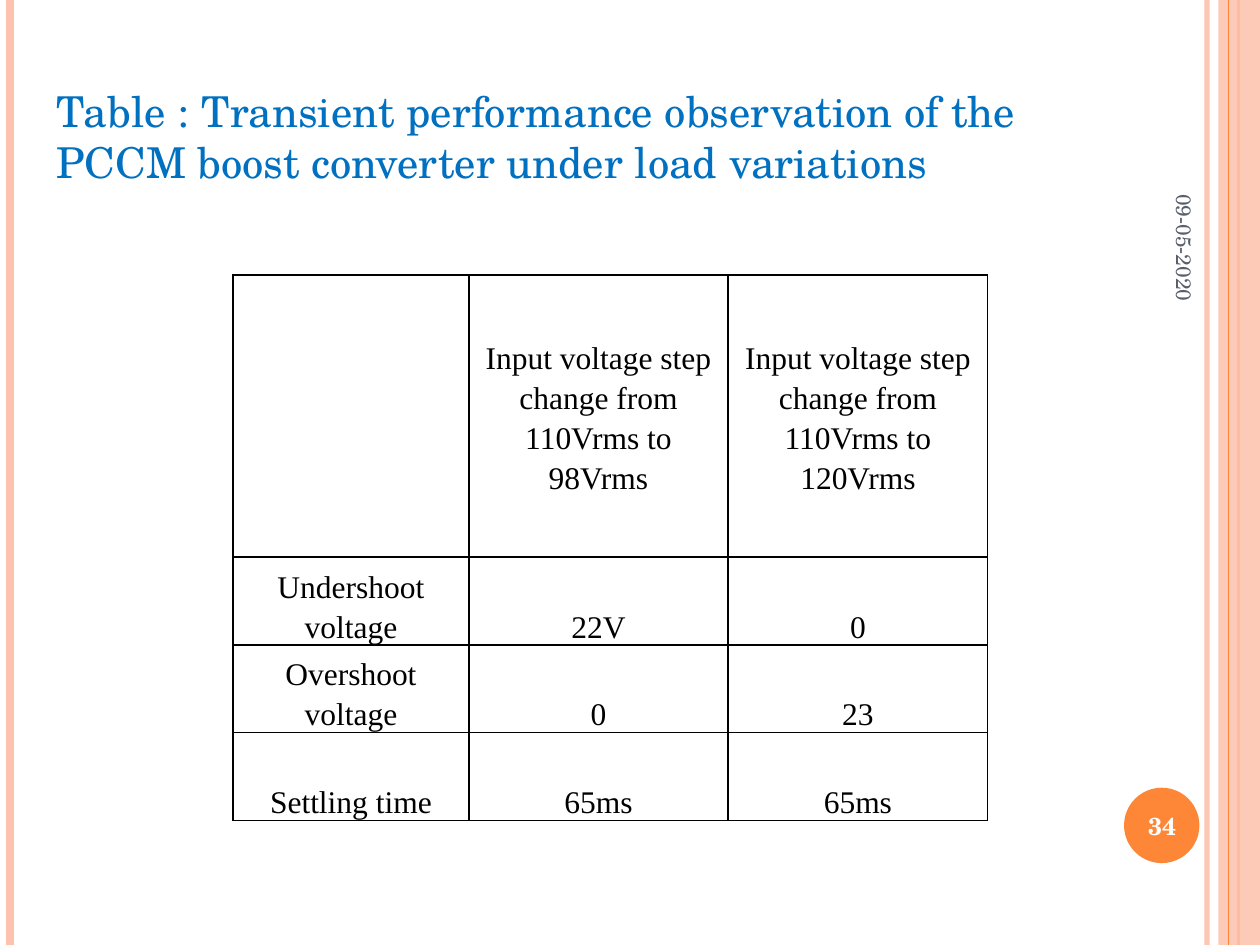
from dataclasses import dataclass

from lxml import etree
from pptx import Presentation
from pptx.dml.color import RGBColor
from pptx.enum.shapes import MSO_CONNECTOR, MSO_SHAPE
from pptx.enum.text import MSO_ANCHOR, PP_ALIGN
from pptx.oxml.ns import qn
from pptx.util import Cm, Pt

STRAIGHT = MSO_CONNECTOR.STRAIGHT
RECTANGLE, OVAL = MSO_SHAPE.RECTANGLE, MSO_SHAPE.OVAL
MIDDLE, BOTTOM = MSO_ANCHOR.MIDDLE, MSO_ANCHOR.BOTTOM
LEFT, CENTER, RIGHT = PP_ALIGN.LEFT, PP_ALIGN.CENTER, PP_ALIGN.RIGHT

WIDTH, HEIGHT = 25.4, 19.05
SERIF, TABLE_FONT = "TeX Gyre Schola", "Times New Roman"
ORANGE, PEACH = "FE8637", "FEC3AE"
BLUE, GRAY, BLACK, WHITE = "0070C0", "575F6D", "000000", "FFFFFF"


@dataclass
class Area:
    left: float
    top: float
    width: float
    height: float

    def lengths(self) -> tuple:
        return Cm(self.left), Cm(self.top), Cm(self.width), Cm(self.height)


@dataclass
class Stripe:
    x: float
    color: str
    points: float
    opacity: int = 100


BACK_STRIPES = [
    Stripe(24.33, PEACH, 3, 93),
    Stripe(0.2, PEACH, 4.5),
    Stripe(24.97, ORANGE, 1.5),
]
FRONT_STRIPE = Stripe(24.77, ORANGE, 0.75)

COLUMN_WIDTHS = [4.75, 5.23, 5.23]
ROW_HEIGHTS = [5.69, 1.77, 1.77, 1.77]
ROWS = [
    ["", "Input voltage step change from 110Vrms to 98Vrms",
     "Input voltage step change from 110Vrms to 120Vrms"],
    ["Undershoot voltage", "22V", "0"],
    ["Overshoot voltage", "0", "23"],
    ["Settling time", "65ms", "65ms"],
]


def rgb(color: str) -> RGBColor:
    return RGBColor.from_string(color)


def set_opacity(shape, percent: int) -> None:
    if percent < 100:
        for color in shape._element.iter(qn("a:srgbClr")):
            etree.SubElement(color, qn("a:alpha"), val=str(percent * 1000))


def write(frame, text: str, *, size: float, color: str, font: str = SERIF,
          align=LEFT, bold: bool = False, spacing: float = 1.0) -> None:
    para = frame.paragraphs[0]
    para.alignment = align
    para.line_spacing = spacing
    span = para.add_run()
    span.text = text
    span.font.name = font
    span.font.size = Pt(size)
    span.font.bold = bold
    span.font.color.rgb = rgb(color)


def add_text(slide, area: Area, text: str, *, anchor=MIDDLE,
             rotation: float = 0, bottom: float = 0.13, **style) -> None:
    box = slide.shapes.add_textbox(*area.lengths())
    box.rotation = rotation
    frame = box.text_frame
    frame.word_wrap = True
    frame.vertical_anchor = anchor
    frame.margin_bottom = Cm(bottom)
    write(frame, text, **style)


def add_stripe(slide, stripe: Stripe) -> None:
    line = slide.shapes.add_connector(
        STRAIGHT, Cm(stripe.x), Cm(0), Cm(stripe.x), Cm(HEIGHT))
    line.line.color.rgb = rgb(stripe.color)
    line.line.width = Pt(stripe.points)
    set_opacity(line, stripe.opacity)
    etree.SubElement(line._element.spPr, qn("a:effectLst"))


def add_solid(slide, kind, area: Area, color: str, opacity: int = 100) -> None:
    shape = slide.shapes.add_shape(kind, *area.lengths())
    shape.shadow.inherit = False
    shape.fill.solid()
    shape.fill.fore_color.rgb = rgb(color)
    shape.line.fill.background()
    set_opacity(shape, opacity)


def add_borders(cell, color: str, points: float) -> None:
    properties = cell._tc.get_or_add_tcPr()
    for index, side in enumerate(("lnL", "lnR", "lnT", "lnB")):
        border = etree.Element(qn(f"a:{side}"), w=str(Pt(points)))
        fill = etree.SubElement(border, qn("a:solidFill"))
        etree.SubElement(fill, qn("a:srgbClr"), val=color)
        properties.insert(index, border)


def add_results(slide, left: float, top: float) -> None:
    area = Area(left, top, sum(COLUMN_WIDTHS), sum(ROW_HEIGHTS))
    table = slide.shapes.add_table(
        len(ROWS), len(COLUMN_WIDTHS), *area.lengths()).table
    table.first_row = False
    table.horz_banding = False
    for column, width in zip(table.columns, COLUMN_WIDTHS):
        column.width = Cm(width)
    for row, height in zip(table.rows, ROW_HEIGHTS):
        row.height = Cm(height)
    for row_index, texts in enumerate(ROWS):
        for column_index, text in enumerate(texts):
            cell = table.cell(row_index, column_index)
            cell.fill.background()
            cell.margin_left = cell.margin_right = Cm(0.18)
            cell.margin_top = cell.margin_bottom = Cm(0)
            cell.vertical_anchor = BOTTOM if row_index else MIDDLE
            add_borders(cell, BLACK, 1)
            if text:
                write(cell.text_frame, text, size=18, color=BLACK,
                      font=TABLE_FONT, align=CENTER, spacing=1.15)


def main() -> None:
    deck = Presentation()
    deck.slide_width, deck.slide_height = Cm(WIDTH), Cm(HEIGHT)
    page = deck.slides.add_slide(deck.slide_layouts[6])
    for stripe in BACK_STRIPES:
        add_stripe(page, stripe)
    add_solid(page, RECTANGLE, Area(24.56, 0, 0.84, HEIGHT), PEACH, 87)
    add_stripe(page, FRONT_STRIPE)
    add_solid(page, OVAL, Area(22.66, 15.88, 1.52, 1.52), ORANGE)
    add_text(page, Area(0.89, 1.32, 21.11, 3.61),
             "Table : Transient performance observation of the "
             "PCCM boost converter under load variations",
             anchor=BOTTOM, bottom=1.16, size=24.3, color=BLUE)
    add_results(page, 4.7, 5.54)
    add_text(page, Area(21.08, 3, 5.59, 1.07), "09-05-2020",
             rotation=90, size=12, color=GRAY, align=RIGHT)
    add_text(page, Area(22.58, 15.93, 1.7, 1.45), "34",
             size=14, color=WHITE, align=CENTER, bold=True)
    deck.save("out.pptx")


if __name__ == "__main__":
    main()
